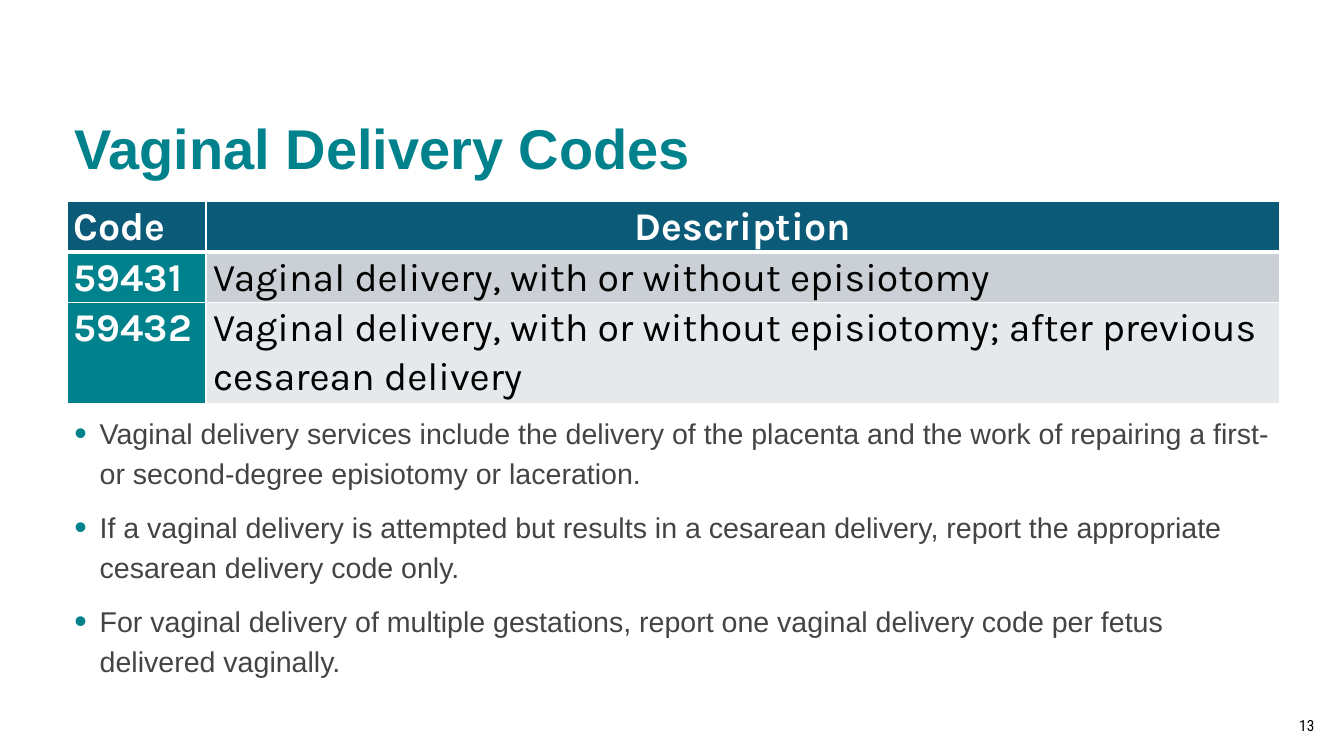
from lxml import etree
from pptx import Presentation
from pptx.dml.color import RGBColor
from pptx.enum import text as t
from pptx.oxml import ns
from pptx.util import Pt

TITLE = "Vaginal Delivery Codes"
CODES = [
    ("Code", "Description"),
    ("59431", "Vaginal delivery, with or without episiotomy"),
    ("59432", "Vaginal delivery, with or without episiotomy; after previous cesarean delivery\u00a0"),
]
NOTES = [
    "Vaginal delivery services include the delivery of the placenta and the work of "
    "repairing a first- or second-degree episiotomy or laceration.",
    "If a vaginal delivery is attempted but results in a cesarean delivery, report the "
    "appropriate cesarean delivery code only.",
    "For vaginal delivery of multiple gestations, report one vaginal delivery code per "
    "fetus delivered vaginally.",
]
PAGE_NUMBER = "13"

TEAL = RGBColor(0x00, 0x82, 0x8D)
NAVY = RGBColor(0x0B, 0x5B, 0x78)
GREY = RGBColor(0x44, 0x44, 0x44)
BLACK = RGBColor(0, 0, 0)
WHITE = RGBColor(0xFF, 0xFF, 0xFF)
BANDS = [RGBColor(0xCA, 0xD0, 0xD5), RGBColor(0xE6, 0xE9, 0xEB)]

LEFT, WIDTH = 46.1, 867.6
COLUMN_WIDTHS = (99.4, 767)
ROW_HEIGHT = 32.4


def style(para, name, size, color, bold=False):
    for span in para.runs:
        span.font.name = name
        span.font.size = Pt(size)
        span.font.bold = bold
        span.font.color.rgb = color


def add_text(page, place, lines, anchor):
    box = page.shapes.add_textbox(*map(Pt, place))
    frame = box.text_frame
    frame.word_wrap = True
    frame.vertical_anchor = anchor
    frame.text = "\n".join(lines)
    return frame.paragraphs


def add_element(parent, tag, **attributes):
    return etree.SubElement(parent, ns.qn(tag), attributes)


def add_bullet(para):
    props = para._p.get_or_add_pPr()
    props.set("marL", str(Pt(18)))
    props.set("indent", str(-Pt(18)))
    add_element(add_element(props, "a:buClr"), "a:srgbClr", val=str(TEAL))
    add_element(props, "a:buSzPct", val="125000")
    add_element(props, "a:buFont", typeface="Arial")
    add_element(props, "a:buChar", char="•")


def add_borders(cell, bottom):
    props = cell._tc.get_or_add_tcPr()
    for side, width in zip("LRTB", (1, 1, 1, bottom)):
        line = add_element(props, f"a:ln{side}", w=str(Pt(width)))
        add_element(add_element(line, "a:solidFill"), "a:srgbClr", val=str(WHITE))


def add_code_table(page):
    frame = page.shapes.add_table(len(CODES), 2, Pt(47.8), Pt(144),
                                  Pt(sum(COLUMN_WIDTHS)), Pt(ROW_HEIGHT * len(CODES)))
    table = frame.table
    for column, width in zip(table.columns, COLUMN_WIDTHS):
        column.width = Pt(width)
    for r, values in enumerate(CODES):
        for c, value in enumerate(values):
            header, plain = r == 0, r > 0 and c == 1
            cell = table.cell(r, c)
            add_borders(cell, 3 if header else 1)
            cell.fill.solid()
            cell.fill.fore_color.rgb = NAVY if header else BANDS[r - 1] if plain else TEAL
            cell.margin_left = cell.margin_right = Pt(5)
            cell.margin_top = cell.margin_bottom = 0
            para = cell.text_frame.paragraphs[0]
            para.text = value
            para.line_spacing = 1.07
            if header and c == 1:
                para.alignment = t.PP_ALIGN.CENTER
            style(para, "Karla", 28, BLACK if plain else WHITE, not plain)


def main():
    deck = Presentation()
    deck.slide_width, deck.slide_height = Pt(960), Pt(540)
    page = deck.slides.add_slide(deck.slide_layouts[6])

    title, = add_text(page, (LEFT, 36, WIDTH, 97.2), [TITLE], t.MSO_ANCHOR.BOTTOM)
    title.line_spacing = 0.9
    style(title, "Arial", 40, TEAL, True)

    notes = add_text(page, (LEFT, 290.2, WIDTH, 196.6), NOTES, t.MSO_ANCHOR.TOP)
    for i, para in enumerate(notes):
        add_bullet(para)
        para.line_spacing = 1.15
        if i:
            para.space_before = Pt(10.8)
        style(para, "Arial", 20.4, GREY)

    number, = add_text(page, (847.4, 507.6, 98.6, 21.6), [PAGE_NUMBER], t.MSO_ANCHOR.MIDDLE)
    number.alignment = t.PP_ALIGN.RIGHT
    style(number, "Roboto Condensed", 11, BLACK)

    add_code_table(page)
    deck.save("out.pptx")


if __name__ == "__main__":
    main()
